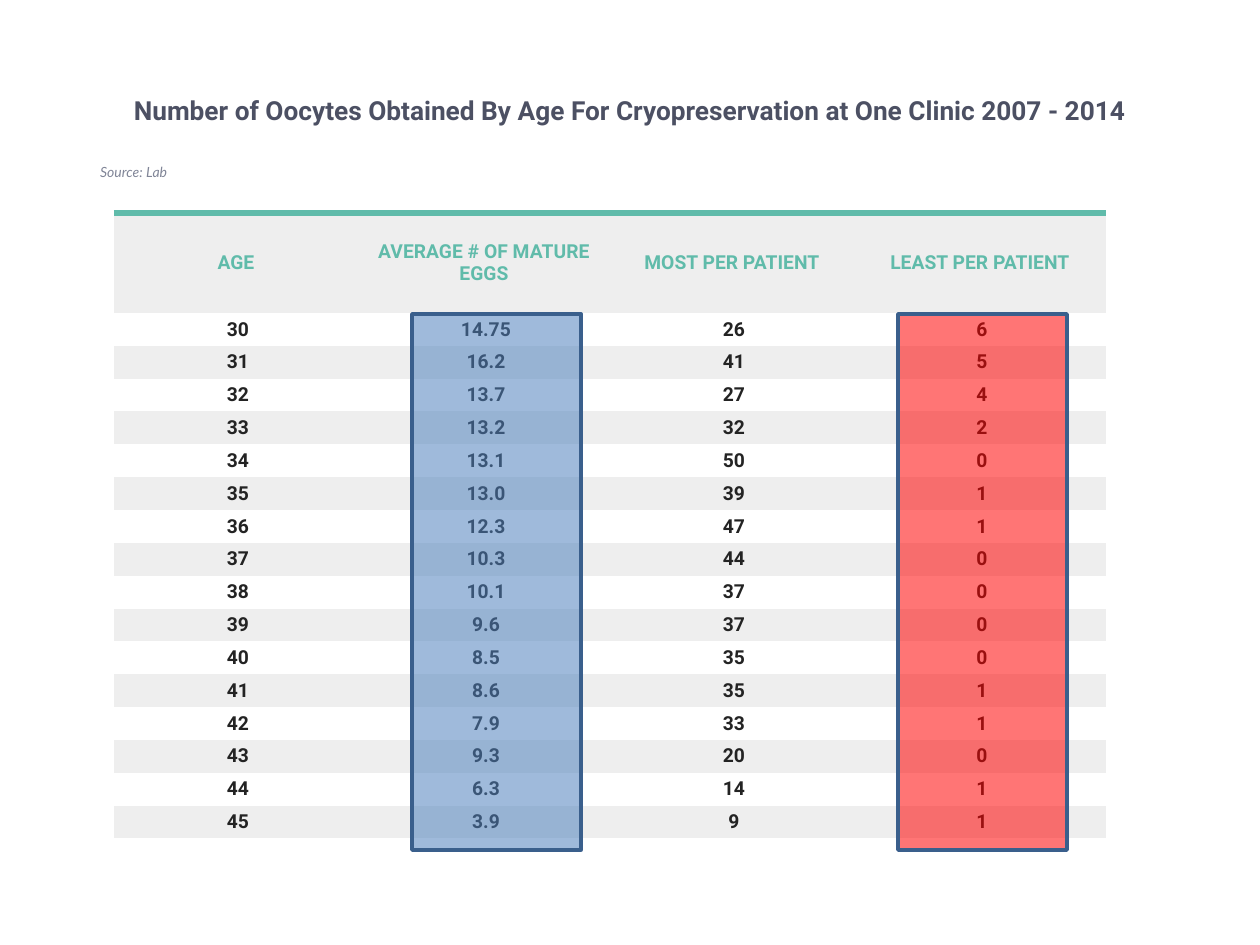
from lxml import etree
from pptx import Presentation
from pptx.dml.color import RGBColor
from pptx.enum.shapes import MSO_SHAPE
from pptx.enum.text import MSO_ANCHOR, MSO_AUTO_SIZE, PP_ALIGN
from pptx.oxml import parse_xml
from pptx.oxml.ns import nsdecls, qn
from pptx.util import Emu, Pt

RECT = MSO_SHAPE.RECTANGLE
TOP, MIDDLE = MSO_ANCHOR.TOP, MSO_ANCHOR.MIDDLE
LEFT, CENTER = PP_ALIGN.LEFT, PP_ALIGN.CENTER
NO_FIT = MSO_AUTO_SIZE.NONE
SCALE = 914400 / 126
PLAIN_STYLE = "{2D5ABB26-0587-4C30-8999-92F81FD0307C}"

HEADS = ["AGE", "AVERAGE # OF MATURE EGGS", "MOST PER PATIENT", "LEAST PER PATIENT"]
MEANS = ["14.75", "16.2", "13.7", "13.2", "13.1", "13.0", "12.3", "10.3",
         "10.1", "9.6", "8.5", "8.6", "7.9", "9.3", "6.3", "3.9"]
MOST = [26, 41, 27, 32, 50, 39, 47, 44, 37, 37, 35, 35, 33, 20, 14, 9]
LEAST = [6, 5, 4, 2, 0, 1, 1, 0, 0, 0, 0, 1, 1, 0, 1, 1]
ROWS = [HEADS, *zip(range(30, 46), MEANS, MOST, LEAST)]


def px(n):
    return Emu(round(n * SCALE))


def style(para, face, size, color, align, bold=False, italic=False):
    para.alignment = align
    for run in para.runs:
        font = run.font
        font.name, font.size = face, Pt(size)
        font.bold, font.italic = bold, italic
        font.color.rgb = RGBColor.from_string(color)


deck = Presentation()
deck.slide_width, deck.slide_height = px(1260), px(945)
slide = deck.slides.add_slide(deck.slide_layouts[5])

# Title and source
title = slide.shapes.title
title.left, title.top, title.width, title.height = px(100), px(92), px(1060), px(154)
frame = title.text_frame
frame.auto_size, frame.word_wrap, frame.vertical_anchor = NO_FIT, True, TOP
frame.margin_left = frame.margin_right = frame.margin_bottom = 0
frame.margin_top = px(2)
head = frame.paragraphs[0]
head.text = "Number of Oocytes Obtained By Age For Cryopreservation at One Clinic 2007 - 2014"
style(head, "Roboto", 15, "4C5063", CENTER, bold=True)
source = frame.add_paragraph()
source.text = "Source: Lab"
source.space_before = Pt(22)
style(source, "Lato", 8, "808597", LEFT, italic=True)

# Table
head_high, body_high = 100, 526
grid = slide.shapes.add_table(len(ROWS), len(HEADS), px(114), px(213),
                              px(992), px(head_high + body_high)).table
grid.first_row = grid.horz_banding = False
grid._tbl.tblPr.find(qn("a:tableStyleId")).text = PLAIN_STYLE
for col in grid.columns:
    col.width = px(248)

for r, row in enumerate(ROWS):
    top = r == 0
    grid.rows[r].height = px(head_high if top else body_high / (len(ROWS) - 1))
    for c, value in enumerate(row):
        cell = grid.cell(r, c)
        cell.vertical_anchor = MIDDLE
        cell.margin_top = cell.margin_bottom = px(5)
        cell.margin_left = px(3 if top else 5)
        cell.margin_right = px(7 if top else 5)
        cell.fill.solid()
        cell.fill.fore_color.rgb = RGBColor.from_string("FFFFFF" if r % 2 else "EEEEEE")
        para = cell.text_frame.paragraphs[0]
        para.text = str(value)
        style(para, "Roboto", 11, "60BBAA" if top else "232323", CENTER, bold=True)
        if top:
            cell._tc.tcPr.insert(0, parse_xml(
                f'<a:lnT {nsdecls("a")} w="{Pt(3.5)}"><a:solidFill>'
                '<a:srgbClr val="60BBAA"/></a:solidFill></a:lnT>'))

# Translucent column highlights
for left, color in [(412, "4F81BD"), (898, "FF0000")]:
    box = slide.shapes.add_shape(RECT, px(left), px(314), px(169), px(536))
    box.shadow.inherit = False
    box.fill.solid()
    box.fill.fore_color.rgb = RGBColor.from_string(color)
    tint = box.fill._xPr.find(qn("a:solidFill"))[0]
    etree.SubElement(tint, qn("a:alpha")).set("val", "54000")
    box.line.color.rgb = RGBColor.from_string("3A5F8C")
    box.line.width = Pt(2)

deck.save("out.pptx")
